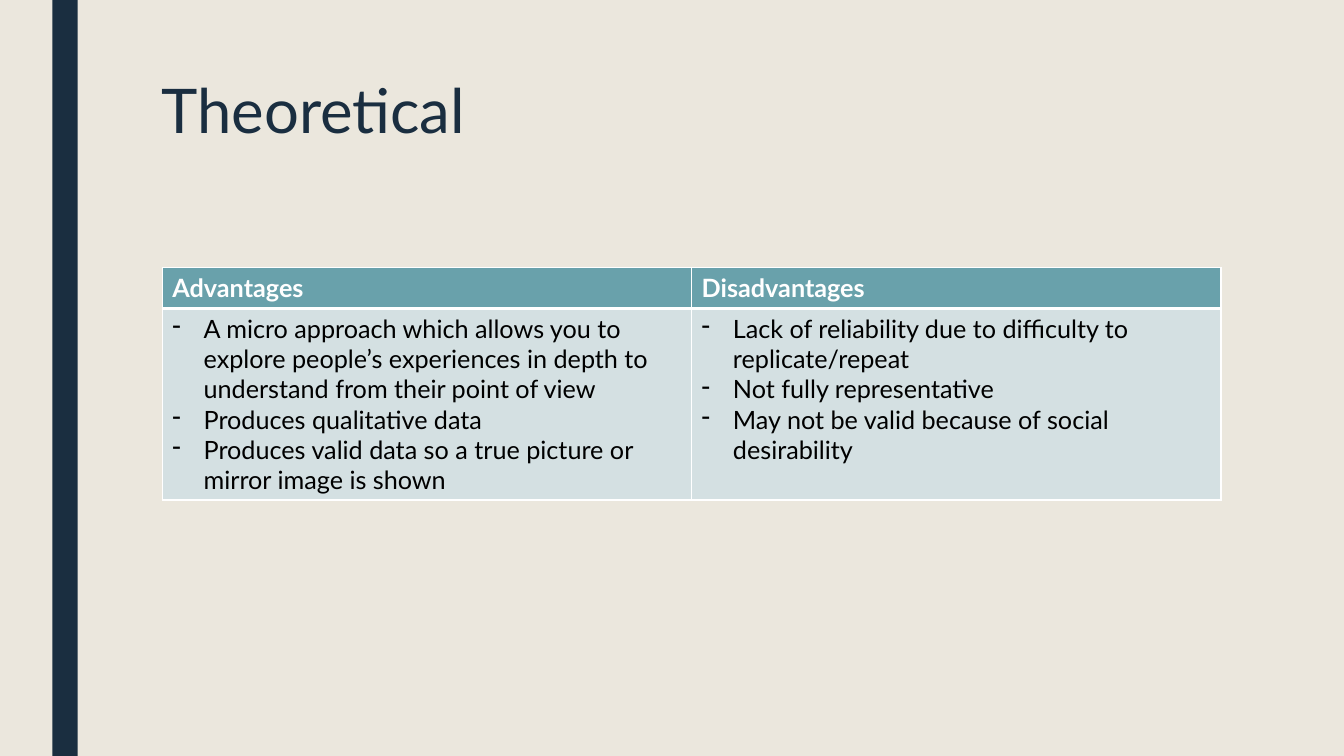
from pptx import Presentation
from pptx.dml.color import RGBColor
from pptx.enum.shapes import MSO_SHAPE as Shape
from pptx.enum.text import MSO_ANCHOR as Anchor, MSO_AUTO_SIZE as AutoSize, PP_ALIGN as Align
from pptx.oxml import parse_xml
from pptx.oxml.ns import nsdecls
from pptx.util import Inches, Pt

NAVY, TEAL, PALE, SAND = "1A2E40", "69A1AB", "D4E0E2", "EBE7DD"
WHITE, BLACK = "FFFFFF", "000000"

COLUMNS = {
    "Advantages": [
        "A micro approach which allows you to explore people’s experiences in depth "
        "to understand from their point of view",
        "Produces qualitative data",
        "Produces valid data so a true picture or mirror image is shown",
    ],
    "Disadvantages": [
        "Lack of reliability due to difficulty to replicate/repeat",
        "Not fully representative",
        "May not be valid because of social desirability",
    ],
}


def rgb(value):
    """Turn a hex string into a colour."""
    return RGBColor.from_string(value)


class Deck:
    """Hold the style and the current slide."""

    font = "Lato"

    def __init__(self, prs):
        """Add a title-only slide with the sand background."""
        self.s = prs.slides.add_slide(prs.slide_layouts[5])
        fill = self.s.background.fill
        fill.solid()
        fill.fore_color.rgb = rgb(SAND)

    def style(self, p, size, color, bold=False):
        """Format every run of a paragraph."""
        for r in p.runs:
            r.font.name, r.font.size, r.font.bold = self.font, Pt(size), bold
            r.font.color.rgb = rgb(color)

    def bar(self, left, top, width, height, color):
        """Draw a plain filled rectangle."""
        sp = self.s.shapes.add_shape(
            Shape.RECTANGLE, Inches(left), Inches(top), Inches(width), Inches(height))
        sp.shadow.inherit = False
        sp.fill.solid()
        sp.fill.fore_color.rgb = rgb(color)
        sp.line.fill.background()

    def title(self, text, left, top, width, height):
        """Place and format the title placeholder."""
        sp = self.s.shapes.title
        sp.left, sp.top = Inches(left), Inches(top)
        sp.width, sp.height = Inches(width), Inches(height)
        tf = sp.text_frame
        tf.text = text
        tf.word_wrap = True
        tf.auto_size = AutoSize.NONE
        tf.vertical_anchor = Anchor.TOP
        p = tf.paragraphs[0]
        p.alignment, p.line_spacing = Align.LEFT, 0.89
        self.style(p, 44, NAVY)

    def bullet(self, p):
        """Give a paragraph a hanging dash."""
        pPr = p._p.get_or_add_pPr()
        pPr.set("marL", str(Inches(0.31)))
        pPr.set("indent", str(-Inches(0.31)))
        pPr.append(parse_xml(f'<a:buChar {nsdecls("a")} char="-"/>'))

    def cell(self, cell, lines, fill, color, header):
        """Fill one table cell with text, borders and colour."""
        tf = cell.text_frame
        tf.text = "\n".join(lines)
        for p in tf.paragraphs:
            if not header:
                self.bullet(p)
            self.style(p, 18, color, header)
        tcPr = cell._tc.get_or_add_tcPr()
        top, bottom = (1, 3) if header else (3, 1)
        for side, width in (("L", 1), ("R", 1), ("T", top), ("B", bottom)):
            tcPr.append(parse_xml(
                f'<a:ln{side} {nsdecls("a")} w="{Pt(width)}"><a:solidFill>'
                f'<a:srgbClr val="{WHITE}"/></a:solidFill></a:ln{side}>'))
        cell.fill.solid()
        cell.fill.fore_color.rgb = rgb(fill)

    def table(self, columns, left, top, width, heights):
        """Build a table with a header and a bulleted cell per column."""
        table = self.s.shapes.add_table(
            len(heights), len(columns), Inches(left), Inches(top),
            Inches(width), Inches(sum(heights))).table
        for row, height in zip(table.rows, heights):
            row.height = Inches(height)
        for i, (heading, points) in enumerate(columns.items()):
            self.cell(table.cell(0, i), [heading], TEAL, WHITE, True)
            self.cell(table.cell(1, i), points, PALE, BLACK, False)


def main():
    """Build and save the slide."""
    prs = Presentation()
    prs.slide_width, prs.slide_height = Inches(13.33), Inches(7.5)
    deck = Deck(prs)
    deck.bar(0.52, 0, 0.25, 7.5, NAVY)
    deck.title("Theoretical", 1.5, 0.75, 10.5, 1.62)
    deck.table(COLUMNS, 1.61, 2.65, 10.5, [0.41, 1.9])
    prs.save("out.pptx")


if __name__ == "__main__":
    main()
